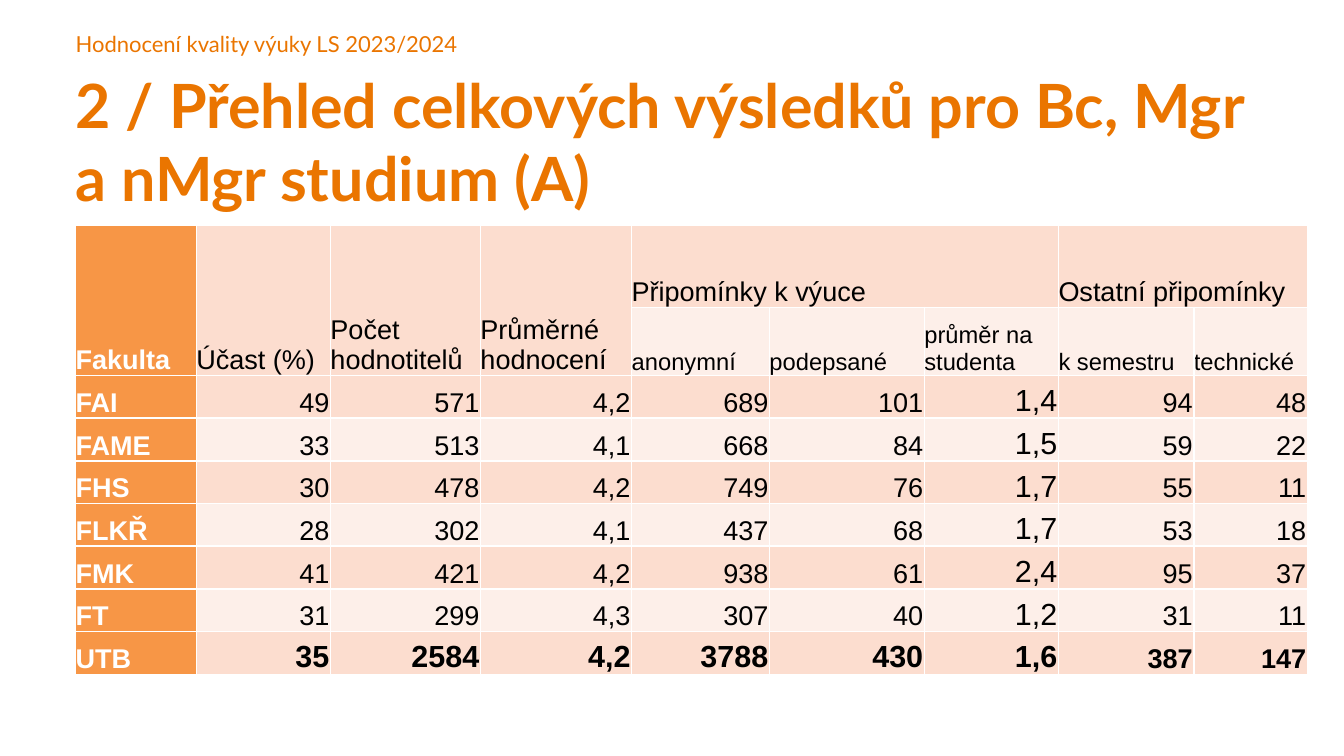
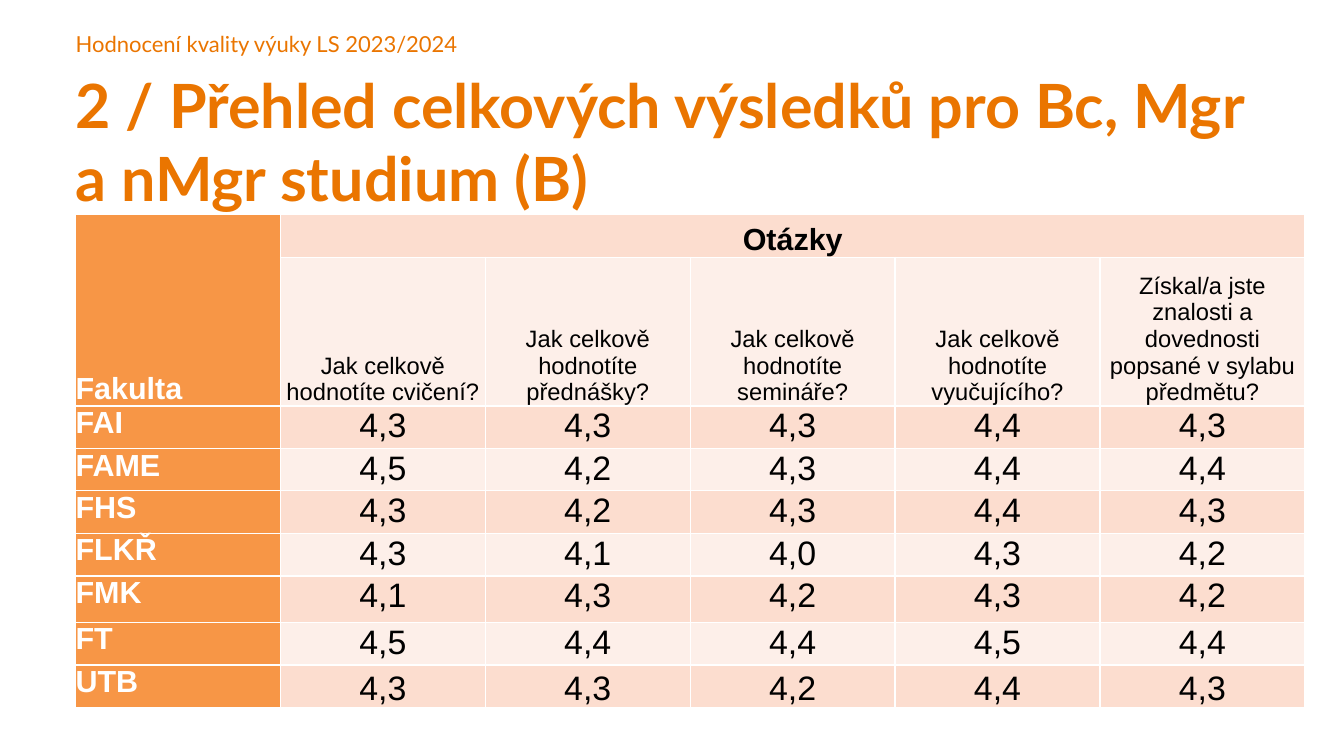
from dataclasses import dataclass

from lxml import etree
from pptx import Presentation
from pptx.dml.color import RGBColor
from pptx.enum.text import MSO_ANCHOR, MSO_AUTO_SIZE, PP_ALIGN
from pptx.oxml.ns import qn
from pptx.util import Inches, Pt


@dataclass(frozen=True)
class Theme:
    accent: str = "EA7500"
    label_fill: str = "F79646"
    bands: tuple = ("FCDDCF", "FDEFE9")
    white: str = "FFFFFF"
    black: str = "000000"
    heading_font: str = "Lato"
    table_font: str = "Arial"
    kicker_size: int = 13
    title_size: int = 36
    subheader_size: int = 14


THEME = Theme()
WIDTH, HEIGHT = 11.02, 6.2
LEFT, TEXT_WIDTH = 0.62, 9.92
HEADER_ROWS = 2

KICKER = "Hodnocení kvality výuky LS 2023/2024"
TITLE = "2 / Přehled celkových výsledků pro Bc, Mgr a nMgr studium ({})"
FACULTIES = ["FAI", "FAME", "FHS", "FLKŘ", "FMK", "FT", "UTB"]

# Spans are (row, column, last row, last column).
OVERVIEW = {
    "part": "A",
    "top": 1.85,
    "columns": [0.99, 1.1, 1.23, 1.24, 1.13, 1.27, 1.1, 1.11, 0.93],
    "rows": [0.67, 0.56] + [0.35] * 7,
    "headers": [
        ["Fakulta", "Účast (%)", "Počet hodnotitelů", "Průměrné hodnocení",
         "Připomínky k výuce", None, None, "Ostatní připomínky", None],
        [None, None, None, None, "anonymní", "podepsané",
         "průměr na studenta", "k semestru", "technické"],
    ],
    "spans": [(0, column, 1, column) for column in range(4)]
             + [(0, 4, 0, 6), (0, 7, 0, 8)],
    "values": [
        ["49", "571", "4,2", "689", "101", "1,4", "94", "48"],
        ["33", "513", "4,1", "668", "84", "1,5", "59", "22"],
        ["30", "478", "4,2", "749", "76", "1,7", "55", "11"],
        ["28", "302", "4,1", "437", "68", "1,7", "53", "18"],
        ["41", "421", "4,2", "938", "61", "2,4", "95", "37"],
        ["31", "299", "4,3", "307", "40", "1,2", "31", "11"],
        ["35", "2584", "4,2", "3788", "430", "1,6", "387", "147"],
    ],
    "label_size": 16,
    "value_size": 16,
    "large_size": 18,
    "large_column": 6,
    "bold_header": False,
    "bold_total": True,
    "header_align": PP_ALIGN.LEFT,
    "value_align": PP_ALIGN.RIGHT,
    "body_anchor": MSO_ANCHOR.BOTTOM,
}

QUESTIONS = {
    "part": "B",
    "top": 1.76,
    "columns": [1.68] * 6,
    "rows": [0.35, 1.22, 0.35, 0.33, 0.35, 0.35, 0.38, 0.35, 0.35],
    "headers": [
        ["Fakulta", "Otázky", None, None, None, None],
        [None, "Jak celkově hodnotíte cvičení?",
         "Jak celkově hodnotíte přednášky?",
         "Jak celkově hodnotíte semináře?",
         "Jak celkově hodnotíte vyučujícího?",
         "Získal/a jste znalosti a dovednosti popsané v sylabu předmětu?"],
    ],
    "spans": [(0, 0, 1, 0), (0, 1, 0, 5)],
    "values": [
        ["4,3", "4,3", "4,3", "4,4", "4,3"],
        ["4,5", "4,2", "4,3", "4,4", "4,4"],
        ["4,3", "4,2", "4,3", "4,4", "4,3"],
        ["4,3", "4,1", "4,0", "4,3", "4,2"],
        ["4,1", "4,3", "4,2", "4,3", "4,2"],
        ["4,5", "4,4", "4,4", "4,5", "4,4"],
        ["4,3", "4,3", "4,2", "4,4", "4,3"],
    ],
    "label_size": 18,
    "value_size": 20,
    "large_size": 20,
    "large_column": None,
    "bold_header": True,
    "bold_total": False,
    "header_align": PP_ALIGN.CENTER,
    "value_align": PP_ALIGN.CENTER,
    "body_anchor": MSO_ANCHOR.TOP,
}


def write(frame, text, font, size, color, bold=False, align=PP_ALIGN.LEFT):
    paragraph = frame.paragraphs[0]
    paragraph.alignment = align
    run = paragraph.add_run()
    run.text = text
    for name, value in {"name": font, "size": Pt(size), "bold": bold}.items():
        setattr(run.font, name, value)
    run.font.color.rgb = RGBColor.from_string(color)


def set_margins(target, side=0, top=0):
    for edge, value in {"left": side, "right": side, "top": top, "bottom": 0}.items():
        setattr(target, f"margin_{edge}", Inches(value))


def add_heading(slide, text, top, height, size, bold):
    frame = slide.shapes.add_textbox(
        Inches(LEFT), Inches(top), Inches(TEXT_WIDTH), Inches(height)).text_frame
    set_margins(frame)
    frame.word_wrap = True
    frame.auto_size = MSO_AUTO_SIZE.SHAPE_TO_FIT_TEXT
    write(frame, text, THEME.heading_font, size, THEME.accent, bold)


def paint_cell(cell, fill):
    """Give a cell thin white borders, then its fill, in schema order."""
    properties = cell._tc.get_or_add_tcPr()
    for edge in ("lnL", "lnR", "lnT", "lnB"):
        line = etree.SubElement(properties, qn(f"a:{edge}"), w=str(Pt(1)))
        solid = etree.SubElement(line, qn("a:solidFill"))
        etree.SubElement(solid, qn("a:srgbClr"), val=THEME.white)
    cell.fill.solid()
    cell.fill.fore_color.rgb = RGBColor.from_string(fill)


def text_style(content, row, column):
    """Return size, bold and alignment for a cell's place in the table."""
    if column == 0:
        return content["label_size"], True, PP_ALIGN.LEFT
    if row == 0:
        return content["label_size"], content["bold_header"], content["header_align"]
    if row < HEADER_ROWS:
        return THEME.subheader_size, False, content["header_align"]
    large = content["large_column"]
    total = content["bold_total"] and row == len(content["rows"]) - 1
    is_large = large is not None and (column == large or total and column < large)
    size = content["large_size" if is_large else "value_size"]
    return size, total, content["value_align"]


def cell_anchor(content, row, column):
    is_last_value = row == len(content["rows"]) - 1 and column > 0
    if row < HEADER_ROWS or is_last_value:
        return MSO_ANCHOR.BOTTOM
    return content["body_anchor"]


def add_results(slide, content):
    columns, rows = content["columns"], content["rows"]
    table = slide.shapes.add_table(
        len(rows), len(columns), Inches(LEFT), Inches(content["top"]),
        Inches(sum(columns)), Inches(sum(rows))).table
    table.first_row = table.horz_banding = False
    for column, width in zip(table.columns, columns):
        column.width = Inches(width)
    for row, height in zip(table.rows, rows):
        row.height = Inches(height)

    body = [[faculty, *values] for faculty, values in zip(FACULTIES, content["values"])]
    for row, texts in enumerate(content["headers"] + body):
        for column, text in enumerate(texts):
            cell = table.cell(row, column)
            is_value = row >= HEADER_ROWS and column > 0
            set_margins(cell, *((0.01, 0.01) if is_value else (0, 0)))
            cell.vertical_anchor = cell_anchor(content, row, column)
            paint_cell(cell, THEME.bands[row % 2] if column else THEME.label_fill)
            if text:
                size, bold, align = text_style(content, row, column)
                color = THEME.black if column else THEME.white
                write(cell.text_frame, text, THEME.table_font, size, color, bold, align)
    for row, column, last_row, last_column in content["spans"]:
        table.cell(row, column).merge(table.cell(last_row, last_column))


def main():
    deck = Presentation()
    deck.slide_width, deck.slide_height = Inches(WIDTH), Inches(HEIGHT)
    for content in (OVERVIEW, QUESTIONS):
        slide = deck.slides.add_slide(deck.slide_layouts[6])
        add_heading(slide, TITLE.format(content["part"]), 0.55, 1.21,
                    THEME.title_size, True)
        add_results(slide, content)
        add_heading(slide, KICKER, 0.25, 0.22, THEME.kicker_size, False)
    deck.save("out.pptx")


if __name__ == "__main__":
    main()
